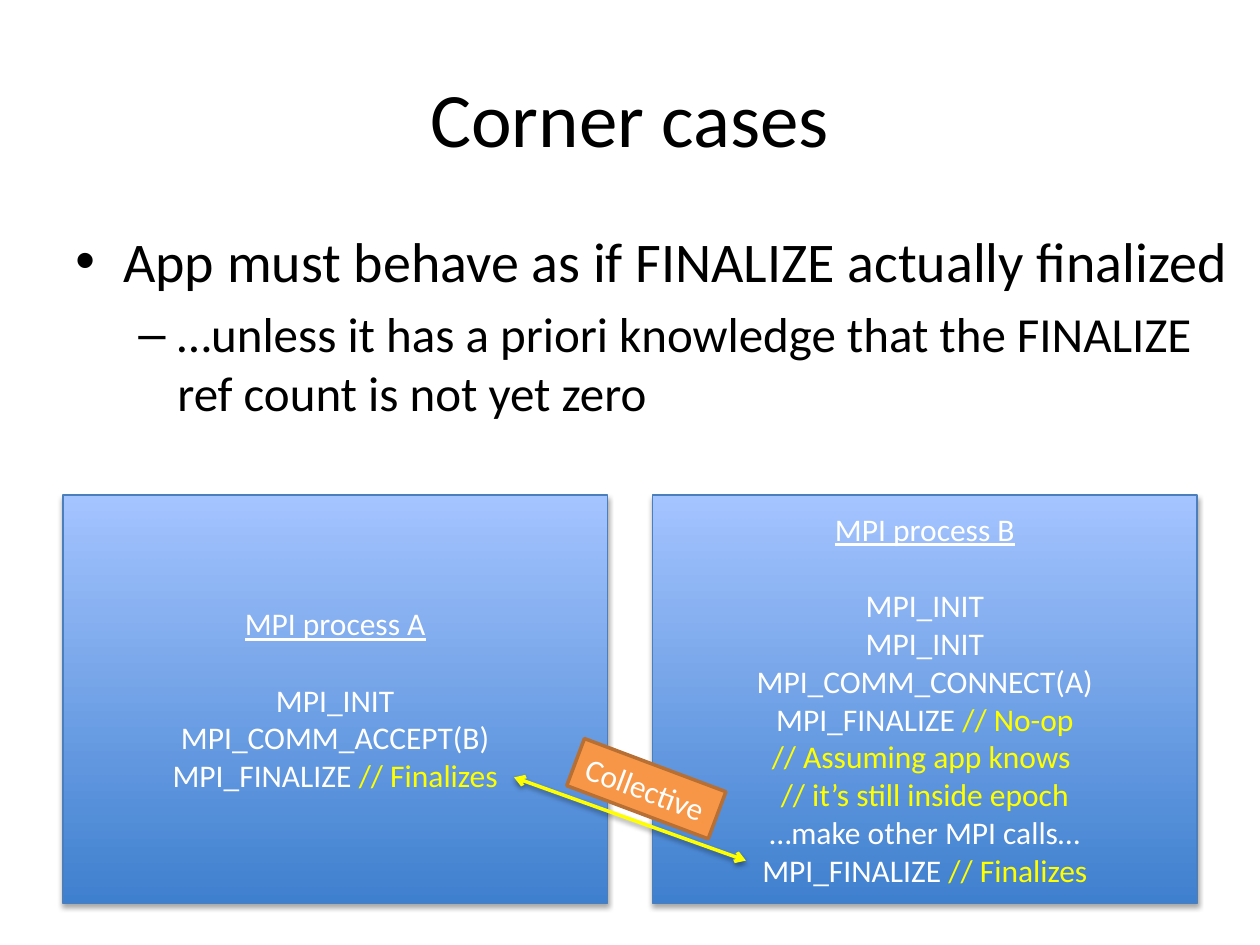
from pptx import Presentation
from pptx.dml.color import RGBColor
from pptx.enum.shapes import MSO_CONNECTOR as Connector, MSO_SHAPE as Shape
from pptx.enum.text import MSO_ANCHOR as Anchor, PP_ALIGN as Align
from pptx.oxml.ns import qn
from pptx.util import Inches, Pt
from lxml.etree import SubElement

# Content
WHITE, BLACK, YELLOW = "FFFFFF", "000000", "FFFF00"
TITLE = "Corner cases"
# text, size, bullet, left margin, hanging indent
BULLETS = [
    ("App must behave as if FINALIZE actually finalized", 32, "•", 0.38, 0.38),
    ("…unless it has a priori knowledge that the FINALIZE ref count is not yet zero",
     28, "–", 0.81, 0.31),
]
# heading, then lines made of (text, colour) spans
PROCESSES = [
    ("MPI process A", [
        [("MPI_INIT", WHITE)],
        [("MPI_COMM_ACCEPT(B)", WHITE)],
        [("MPI_FINALIZE ", WHITE), ("// Finalizes", YELLOW)],
    ]),
    ("MPI process B", [
        [("MPI_INIT", WHITE)],
        [("MPI_INIT", WHITE)],
        [("MPI_COMM_CONNECT(A)", WHITE)],
        [("MPI_FINALIZE ", WHITE), ("// No-op", YELLOW)],
        [("// Assuming app knows ", YELLOW)],
        [("// it’s still inside epoch", YELLOW)],
        [("…make other MPI calls…", WHITE)],
        [("MPI_FINALIZE ", WHITE), ("// Finalizes", YELLOW)],
    ]),
]
LINK_LABEL = "Collective"

# Layout
WIDTH, HEIGHT, MARGIN = 10, 7.5, 0.5
PANEL_TOP, PANEL_WIDTH, PANEL_HEIGHT = 3.93, 4.32, 3.24
PANEL_STEP = WIDTH - 2 * MARGIN - PANEL_WIDTH
CODE_SIZE, CODE_LINE = 18, 22


def colour(value):
    return RGBColor.from_string(value)


def add_span(para, text, size=CODE_SIZE, ink=WHITE, underline=None):
    span = para.add_run()
    span.text = text
    font = span.font
    font.name, font.size, font.underline = "Calibri", Pt(size), underline
    font.color.rgb = colour(ink)


def add_text_box(left, top, width, height, anchor=Anchor.TOP):
    box = page.shapes.add_textbox(*map(Inches, (left, top, width, height)))
    box.text_frame.word_wrap = True
    box.text_frame.vertical_anchor = anchor
    return box.text_frame


def add_box(left, top, width, height, line, weight):
    box = page.shapes.add_shape(
        Shape.RECTANGLE, *map(Inches, (left, top, width, height)))
    box.shadow.inherit = False
    box.line.color.rgb = colour(line)
    box.line.width = Pt(weight)
    return box


def add_shadow(shape, opacity, distance):
    properties = shape._element.spPr
    effects = properties.find(qn("a:effectLst"))
    if effects is None:
        effects = SubElement(properties, qn("a:effectLst"))
    shadow = SubElement(effects, qn("a:outerShdw"), blurRad=str(Pt(3.1)),
                        dist=str(Pt(distance)), dir="5400000", rotWithShape="0")
    black = SubElement(shadow, qn("a:srgbClr"), val=BLACK)
    SubElement(black, qn("a:alpha"), val=str(opacity * 1000))


deck = Presentation()
deck.slide_width, deck.slide_height = Inches(WIDTH), Inches(HEIGHT)
page = deck.slides.add_slide(deck.slide_layouts[6])

# Title
para = add_text_box(MARGIN, 0.3, WIDTH - 2 * MARGIN, 1.25, Anchor.MIDDLE).paragraphs[0]
para.alignment = Align.CENTER
add_span(para, TITLE, size=44, ink=BLACK)

# Bullets
frame = add_text_box(MARGIN, 1.75, WIDTH - MARGIN, 4.95)
for index, (text, size, mark, margin, hanging) in enumerate(BULLETS):
    para = frame.add_paragraph() if index else frame.paragraphs[0]
    para.level = index
    para.space_before = Pt(size * 0.2)
    settings = para._p.get_or_add_pPr()
    settings.set("marL", str(Inches(margin)))
    settings.set("indent", str(-Inches(hanging)))
    SubElement(settings, qn("a:buFont"), typeface="Arial")
    SubElement(settings, qn("a:buChar"), char=mark)
    add_span(para, text, size=size, ink=BLACK)

# Process panels
for column, (heading, lines) in enumerate(PROCESSES):
    panel = add_box(MARGIN + column * PANEL_STEP, PANEL_TOP,
                    PANEL_WIDTH, PANEL_HEIGHT, "4B7EBC", 0.75)
    panel.fill.gradient()
    panel.fill.gradient_angle = 90
    for stop, shade in zip(panel.fill.gradient_stops, ("3F80CE", "A4C4FF")):
        stop.color.rgb = colour(shade)
    add_shadow(panel, 35, 1.8)
    frame = panel.text_frame
    frame.vertical_anchor = Anchor.MIDDLE
    para = frame.paragraphs[0]
    para.alignment = Align.CENTER
    para.space_after = Pt(CODE_LINE)
    add_span(para, heading, underline=True)
    for spans in lines:
        para = frame.add_paragraph()
        para.alignment = Align.CENTER
        for text, ink in spans:
            add_span(para, text, ink=ink)

# Two-way arrow between the finalize calls
arrow = page.shapes.add_connector(
    Connector.STRAIGHT, *map(Inches, (4.08, 6.17, 5.92, 6.83)))
arrow.line.color.rgb = colour(YELLOW)
arrow.line.width = Pt(2)
for end in ("a:headEnd", "a:tailEnd"):
    SubElement(arrow.line._get_or_add_ln(), qn(end), type="arrow")
add_shadow(arrow, 38, 1.6)

# Arrow label
label = add_box(4.53, 6.06, 1.2, 0.4, "B76F34", 2)
label.rotation = 20.6
label.fill.solid()
label.fill.fore_color.rgb = colour("F79646")
label.text_frame.word_wrap = False
label.text_frame.vertical_anchor = Anchor.TOP
para = label.text_frame.paragraphs[0]
para.alignment = Align.LEFT
add_span(para, LINK_LABEL)

deck.save("out.pptx")
